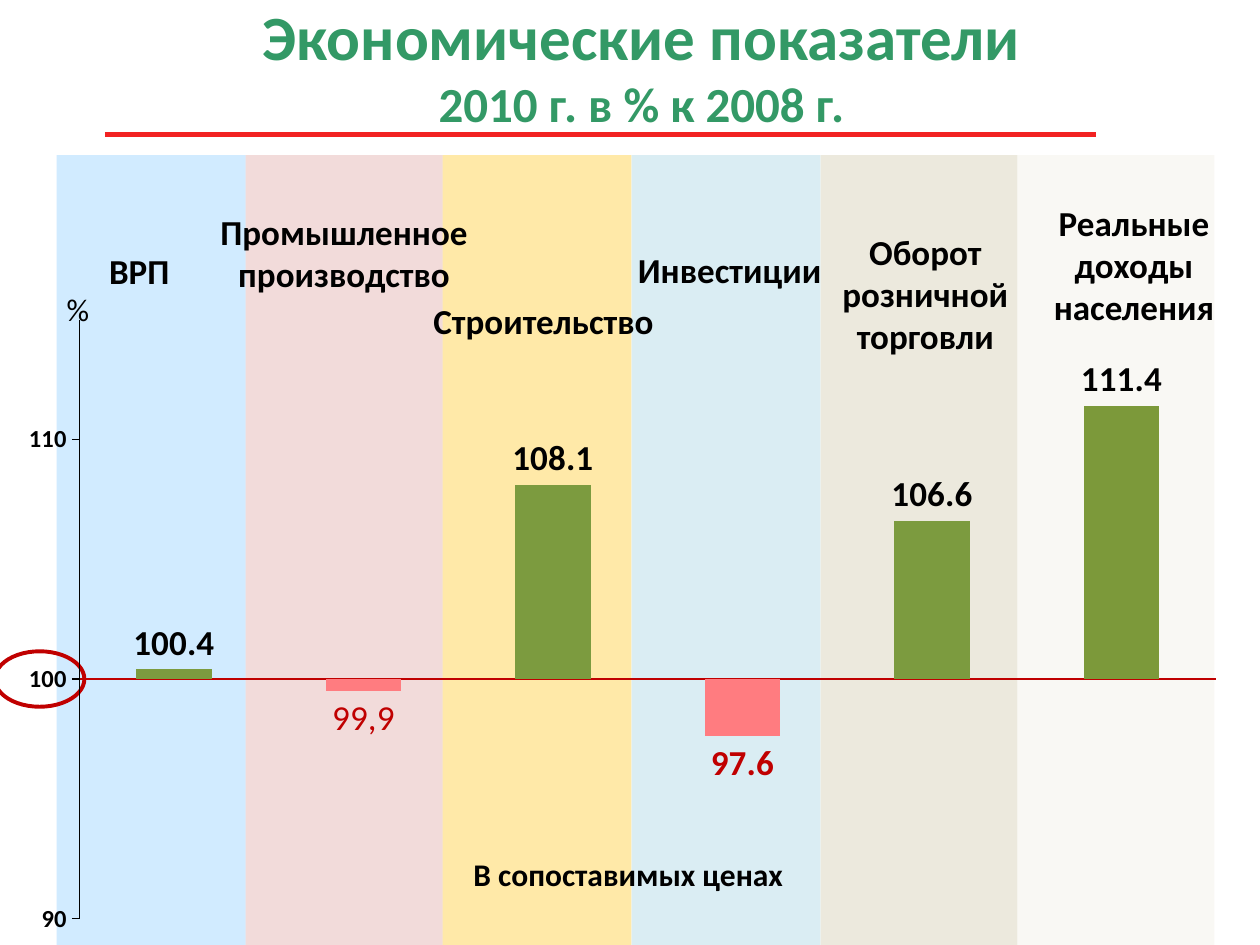
import pptx
import pptx.util
import pptx.chart.data
import pptx.dml.color
import pptx.enum.chart
import pptx.enum.shapes
import pptx.enum.text
import pptx.oxml
import pptx.oxml.ns
import lxml.etree

Pt = pptx.util.Pt
RGBColor = pptx.dml.color.RGBColor
ALIGN = pptx.enum.text.PP_ALIGN
ANCHOR = pptx.enum.text.MSO_ANCHOR
SHAPE = pptx.enum.shapes.MSO_SHAPE
qn = pptx.oxml.ns.qn

FONT = "Calibri"
BLACK = RGBColor(0x00, 0x00, 0x00)
TITLE_GREEN = RGBColor(0x33, 0x99, 0x66)
RULE_RED = RGBColor(0xF2, 0x22, 0x22)
DARK_RED = RGBColor(0xC0, 0x00, 0x00)
BAR_GREEN = RGBColor(0x7C, 0x9B, 0x3F)
LAST_GREEN = RGBColor(0x7C, 0x99, 0x3A)
BAR_PINK = RGBColor(0xFF, 0x7C, 0x80)
BAND_BLUE = RGBColor(0x79, 0xC6, 0xFF)
BAND_ROSE = RGBColor(0xD9, 0x96, 0x94)
BAND_GOLD = RGBColor(0xFF, 0xC0, 0x00)
BAND_AQUA = RGBColor(0x93, 0xCD, 0xDD)
BAND_TAN = RGBColor(0xC4, 0xBD, 0x97)
BAND_CREAM = RGBColor(0xEE, 0xEC, 0xE1)


def format_font(font, size, color=BLACK, bold=True):
    values = {"name": FONT, "size": Pt(size), "bold": bold}
    for name, value in values.items():
        setattr(font, name, value)
    font.color.rgb = color


def add_label(slide, box, lines, size, align=ALIGN.CENTER, bold=True):
    shape = slide.shapes.add_textbox(*[Pt(length) for length in box])
    frame = shape.text_frame
    frame.word_wrap = True
    frame.text = lines
    for paragraph in frame.paragraphs:
        paragraph.alignment = align
        format_font(paragraph.font, size, bold=bold)


presentation = pptx.Presentation()
presentation.slide_width = Pt(720)
presentation.slide_height = Pt(540)
slide = presentation.slides.add_slide(presentation.slide_layouts[5])

# Title with a soft text shadow
title = slide.shapes.title
title_box = {"left": 42.5, "top": -8, "width": 648, "height": 90}
for name, value in title_box.items():
    setattr(title, name, Pt(value))
title.text_frame.auto_size = pptx.enum.text.MSO_AUTO_SIZE.NONE
title.text_frame.vertical_anchor = ANCHOR.MIDDLE
paragraph = title.text_frame.paragraphs[0]
paragraph.alignment = ALIGN.CENTER
for text, size in (("Экономические показатели", 36), ("2010 г. в % к 2008 г.", 28)):
    if paragraph.runs:
        paragraph.add_line_break()
    run = paragraph.add_run()
    run.text = text
    format_font(run.font, size, TITLE_GREEN)
    fill = run.font.fill._xPr.find(qn("a:solidFill"))
    fill.addnext(pptx.oxml.parse_xml(
        '<a:effectLst xmlns:a="http://schemas.openxmlformats.org/drawingml/2006/main">'
        '<a:outerShdw blurRad="38100" dist="38100" dir="2700000" algn="tl">'
        '<a:srgbClr val="000000"><a:alpha val="43000"/></a:srgbClr>'
        '</a:outerShdw></a:effectLst>'))

# Rule under the title
rule = slide.shapes.add_connector(
    pptx.enum.shapes.MSO_CONNECTOR.STRAIGHT, Pt(60), Pt(77), Pt(626.5), Pt(77))
rule.line.color.rgb = RULE_RED
rule.line.width = Pt(2.75)
lxml.etree.SubElement(rule._element.spPr, qn("a:effectLst"))

# Translucent bands, one per indicator
left = 32.4
for color, width, opacity in (
    (BAND_BLUE, 108, 34), (BAND_ROSE, 112.5, 34), (BAND_GOLD, 108, 34),
    (BAND_AQUA, 108, 34), (BAND_TAN, 112.5, 32), (BAND_CREAM, 112.5, 34),
):
    band = slide.shapes.add_shape(SHAPE.RECTANGLE, Pt(left), Pt(88.6), Pt(width), Pt(474))
    band.shadow.inherit = False
    band.fill.solid()
    band.fill.fore_color.rgb = color
    band.line.fill.background()
    color_element = band._element.spPr.find(".//" + qn("a:srgbClr"))
    lxml.etree.SubElement(color_element, qn("a:alpha"), val=str(opacity * 1000))
    left += width

# Indicator names
for box, lines in (
    ((25.2, 139, 108.7, 31.7), "ВРП"),
    ((111.6, 116.6, 170, 55.4), "Промышленное производство"),
    ((235.4, 167.8, 150.5, 31.7), "Строительство"),
    ((351.8, 138.2, 130.3, 31.7), "Инвестиции"),
    ((462.2, 128.2, 133.2, 80), "Оборот\nрозничной\nторговли"),
    ((558.7, 111.6, 178.6, 80), "Реальные\vдоходы\nнаселения"),
):
    add_label(slide, box, lines, 20)

# Ring around the 100 mark
ring = slide.shapes.add_shape(SHAPE.OVAL, Pt(-2.9), Pt(372.2), Pt(51.1), Pt(31.7))
ring.shadow.inherit = False
ring.fill.background()
ring.line.color.rgb = DARK_RED
ring.line.width = Pt(2.25)

# Column chart around the 100 base line
chart_data = pptx.chart.data.CategoryChartData()
chart_data.categories = ["1", "2", "3", "4", "5", "6"]
chart_data.add_series("Series 1", (100.4, 99.5, 108.1, 97.6, 106.6, 111.4))
chart = slide.shapes.add_chart(
    pptx.enum.chart.XL_CHART_TYPE.COLUMN_CLUSTERED,
    Pt(8.6), Pt(70.6), Pt(692), Pt(470.9), chart_data).chart
chart.has_legend = False
chart.has_title = False
format_font(chart.font, 18, bold=False)

plot = chart.plots[0]
plot.gap_width = 150
plot.vary_by_categories = False
series = plot.series[0]
series.invert_if_negative = False
series.format.fill.solid()
series.format.fill.fore_color.rgb = BAR_GREEN
for index, color in ((1, BAR_PINK), (3, BAR_PINK), (5, LAST_GREEN)):
    point_fill = series.points[index].format.fill
    point_fill.solid()
    point_fill.fore_color.rgb = color

# Value labels, red below the base line
outside = pptx.enum.chart.XL_LABEL_POSITION.OUTSIDE_END
label_format = {"show_value": True, "number_format": "0.0",
                "number_format_is_linked": False, "position": outside}
for name, value in label_format.items():
    setattr(series.data_labels, name, value)
format_font(series.data_labels.font, 20)
industry_label = series.points[1].data_label
industry_label.text_frame.text = "99,9"
format_font(industry_label.text_frame.paragraphs[0].runs[0].font, 20, DARK_RED, False)
investment_label = series.points[3].data_label
format_font(investment_label.font, 20, DARK_RED)
for label in (industry_label, investment_label):
    label.position = outside

# Axes
tick = pptx.enum.chart.XL_TICK_MARK
value_axis = chart.value_axis
value_format = {"minimum_scale": 90, "maximum_scale": 115, "major_unit": 10,
                "has_major_gridlines": False, "major_tick_mark": tick.OUTSIDE,
                "minor_tick_mark": tick.NONE, "crosses_at": 100}
for name, value in value_format.items():
    setattr(value_axis, name, value)
value_axis.tick_labels.number_format = "0"
value_axis.tick_labels.number_format_is_linked = False
format_font(value_axis.tick_labels.font, 14)
category_axis = chart.category_axis
category_format = {"major_tick_mark": tick.NONE, "minor_tick_mark": tick.NONE,
                   "tick_label_position": pptx.enum.chart.XL_TICK_LABEL_POSITION.NONE}
for name, value in category_format.items():
    setattr(category_axis, name, value)
for axis, color, width in ((value_axis, BLACK, 0.75), (category_axis, DARK_RED, 1.25)):
    axis.format.line.color.rgb = color
    axis.format.line.width = Pt(width)

# Fixed place of the plot area inside the chart
plot_area = chart._chartSpace.find(".//" + qn("c:plotArea"))
for old_layout in plot_area.findall(qn("c:layout")):
    plot_area.remove(old_layout)
layout = lxml.etree.Element(qn("c:layout"))
manual = lxml.etree.SubElement(layout, qn("c:manualLayout"))
for name, value in (("layoutTarget", "inner"), ("xMode", "edge"), ("yMode", "edge"),
                    ("x", "0.053"), ("y", "0.238"), ("w", "0.939"), ("h", "0.727")):
    lxml.etree.SubElement(manual, qn("c:" + name), val=value)
plot_area.insert(0, layout)

# Unit and price note
add_label(slide, (31, 162, 28.1, 28.8), "%", 18, ALIGN.LEFT, False)
add_label(slide, (263.5, 485.3, 197.3, 28.8), "В сопоставимых ценах", 18, ALIGN.LEFT)

presentation.save("out.pptx")
